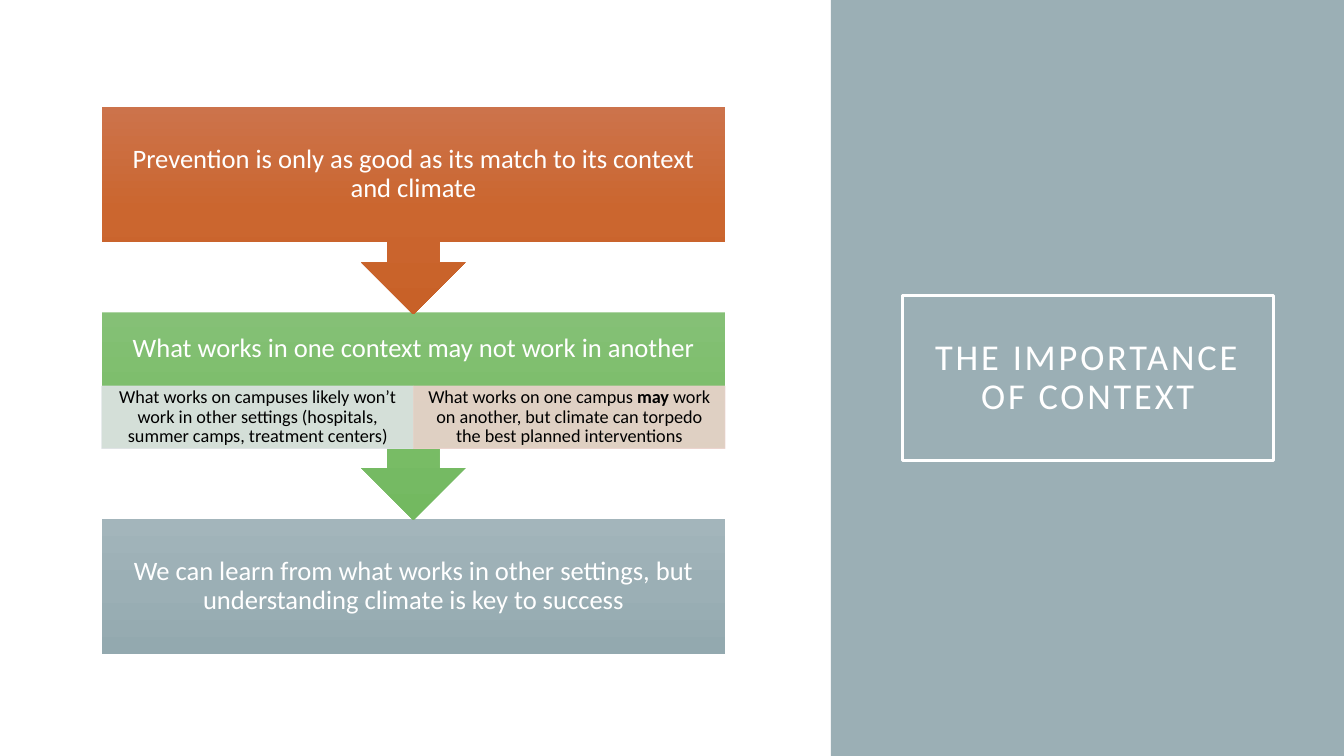
from lxml.etree import SubElement
from pptx import Presentation
from pptx.dml.color import RGBColor
from pptx.enum.shapes import MSO_SHAPE
from pptx.enum.text import MSO_ANCHOR, PP_ALIGN
from pptx.oxml.ns import qn
from pptx.util import Inches, Pt

TITLE = "THE IMPORTANCE OF CONTEXT"
STEPS = [
    {"text": "Prevention is only as good as its match to its context and climate",
     "top": 1.06, "colours": ("CC734B", "CB662F", "C86128"), "details": []},
    {"text": "What works in one context may not work in another",
     "top": 3.1, "colours": ("85C076", "7ABD68", "73B960"), "details": [
         (["What works on campuses likely won’t work in other settings "
           "(hospitals, summer camps, treatment centers)"], "DEE3E5"),
         (["What works on one campus ", "may",
           " work on another, but climate can torpedo the best planned interventions"], "EBD3CD"),
     ]},
    {"text": "We can learn from what works in other settings, but understanding climate is key to success",
     "top": 5.15, "colours": ("A3B5BB", "9BAFB5", "93A9AF"), "details": []},
]
THEME = {
    "font": "Calibri", "panel": "9BAFB5", "light": "FFFFFF", "dark": "000000",
    "title_size": 26, "step_size": 19, "detail_size": 13,
}

STEP_LEFT, STEP_WIDTH = 1.01, 6.18
BOX_HEIGHT, CALLOUT_HEIGHT = 1.34, 2.06
HEADING_HEIGHT, DETAIL_HEIGHT = 0.72, 0.62
DETAIL_OFFSET = 0.73
STEP_INSET = 0.15
BOLD_WORDS = {"may"}


def add_box(page, kind, left, top, width, height):
    box = page.shapes.add_shape(kind, Inches(left), Inches(top), Inches(width), Inches(height))
    box.shadow.inherit = False
    box.fill.background()
    box.line.fill.background()
    return box


def set_fill(box, colour):
    box.fill.solid()
    box.fill.fore_color.rgb = RGBColor.from_string(colour)


def set_line(box, colour, width):
    box.line.color.rgb = RGBColor.from_string(colour)
    box.line.width = Pt(width)


def set_gradient(box, colours):
    box.fill.gradient()
    box.fill.gradient_angle = 270
    stops = box.element.spPr.find(qn("a:gradFill")).find(qn("a:gsLst"))
    for stop in list(stops):
        stops.remove(stop)
    for index, colour in enumerate(colours):
        stop = SubElement(stops, qn("a:gs"), pos=str(index * 50000))
        SubElement(stop, qn("a:srgbClr"), val=colour)


def set_opacity(box, percent):
    for colour in box.element.spPr.iter(qn("a:srgbClr")):
        SubElement(colour, qn("a:alpha"), val=str(percent * 1000))


def write(box, pieces, size, colour, inset_x, inset_y, extra_bottom=0):
    frame = box.text_frame
    frame.word_wrap = True
    frame.vertical_anchor = MSO_ANCHOR.MIDDLE
    frame.margin_left = frame.margin_right = Inches(inset_x)
    frame.margin_top = Inches(inset_y)
    frame.margin_bottom = Inches(inset_y + extra_bottom)
    para = frame.paragraphs[0]
    para.alignment = PP_ALIGN.CENTER
    para.line_spacing = 0.9
    for piece in pieces:
        span = para.add_run()
        span.text = piece
        span.font.name = THEME["font"]
        span.font.size = Pt(size)
        span.font.bold = piece in BOLD_WORDS
        span.font.color.rgb = RGBColor.from_string(colour)
    return para


def add_title(page):
    panel = add_box(page, MSO_SHAPE.RECTANGLE, 8.24, 0, 5.09, 7.5)
    set_fill(panel, THEME["panel"])
    box = add_box(page, MSO_SHAPE.RECTANGLE, 8.95, 2.93, 3.68, 1.64)
    set_line(box, THEME["light"], 2.5)
    para = write(box, [TITLE], THEME["title_size"], THEME["light"], 0.2, 0.2)
    para.runs[0].font._element.set("spc", "200")


def add_step(page, step, is_last):
    kind = MSO_SHAPE.RECTANGLE if is_last else MSO_SHAPE.DOWN_ARROW_CALLOUT
    height = BOX_HEIGHT if is_last else CALLOUT_HEIGHT
    box = add_box(page, kind, STEP_LEFT, step["top"], STEP_WIDTH, height)
    set_gradient(box, step["colours"])
    details = step["details"]
    extra_bottom = BOX_HEIGHT - HEADING_HEIGHT if details else 0
    write(box, [step["text"]], THEME["step_size"], THEME["light"],
          STEP_INSET, STEP_INSET, extra_bottom)
    for index, (pieces, colour) in enumerate(details):
        width = STEP_WIDTH / len(details)
        detail = add_box(page, MSO_SHAPE.RECTANGLE, STEP_LEFT + index * width,
                         step["top"] + DETAIL_OFFSET, width, DETAIL_HEIGHT)
        set_fill(detail, colour)
        set_line(detail, colour, 0.5)
        set_opacity(detail, 90)
        write(detail, pieces, THEME["detail_size"], THEME["dark"], 0.1, 0.02)


def main():
    deck = Presentation()
    deck.slide_width, deck.slide_height = Inches(13.33), Inches(7.5)
    page = deck.slides.add_slide(deck.slide_layouts[6])
    add_title(page)
    for step in reversed(STEPS):
        add_step(page, step, step is STEPS[-1])
    deck.save("out.pptx")


if __name__ == "__main__":
    main()
